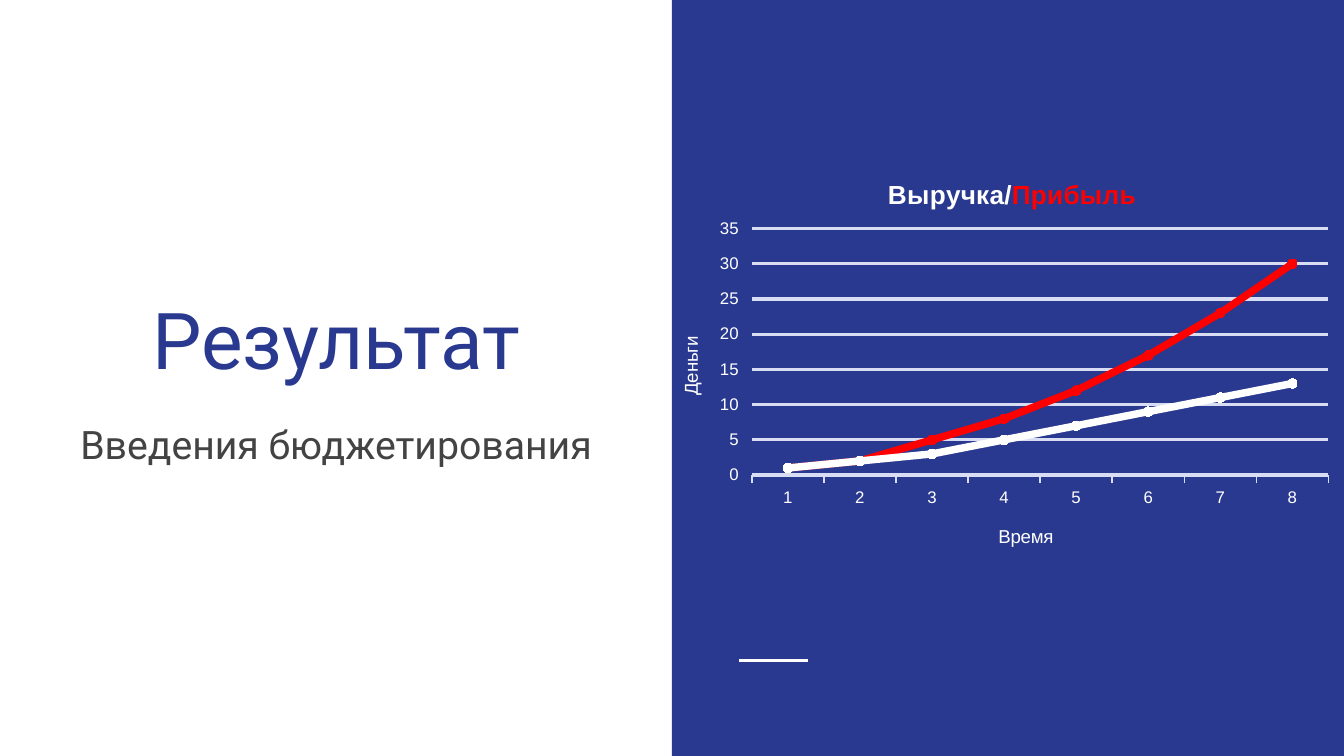
"""Build the budgeting result slide with a revenue and profit line chart."""
import pptx
import pptx.chart.data
import pptx.dml.color
import pptx.enum.chart
import pptx.enum.shapes
import pptx.enum.text
import pptx.oxml
import pptx.oxml.ns
import pptx.util

Cm = pptx.util.Cm
Pt = pptx.util.Pt
qn = pptx.oxml.ns.qn

NAVY = pptx.dml.color.RGBColor(0x2A, 0x39, 0x90)
WHITE = pptx.dml.color.RGBColor(0xFF, 0xFF, 0xFF)
GRAY = pptx.dml.color.RGBColor(0x43, 0x43, 0x43)
RED = pptx.dml.color.RGBColor(0xFF, 0x00, 0x00)
PALE = pptx.dml.color.RGBColor(0xD9, 0xDD, 0xF4)


def add_text(paragraph, text, size=10, color=WHITE, font="Arial", bold=False):
    run = paragraph.add_run()
    run.text = text
    run.font.size = Pt(size)
    run.font.name = font
    run.font.bold = bold
    run.font.color.rgb = color


def set_layout(element, index, **values):
    for old_layout in element.findall(qn("c:layout")):
        element.remove(old_layout)
    fields = "".join(f'<c:{name} val="{value}"/>' for name, value in values.items())
    element.insert(index, pptx.oxml.parse_xml(
        f'<c:layout {pptx.oxml.ns.nsdecls("c")}><c:manualLayout>{fields}</c:manualLayout></c:layout>'))


presentation = pptx.Presentation()
presentation.slide_width = Cm(25.4)
presentation.slide_height = Cm(14.29)
slide = presentation.slides.add_slide(presentation.slide_layouts[6])

panel = slide.shapes.add_shape(
    pptx.enum.shapes.MSO_SHAPE.RECTANGLE, Cm(12.7), Cm(0), Cm(12.7), Cm(14.29))
panel.shadow.inherit = False
panel.fill.solid()
panel.fill.fore_color.rgb = NAVY
panel.line.fill.background()

accent = slide.shapes.add_connector(
    pptx.enum.shapes.MSO_CONNECTOR.STRAIGHT, Cm(13.97), Cm(12.48), Cm(15.27), Cm(12.48))
accent.line.color.rgb = WHITE
accent.line.width = Pt(1.5)
accent._element.spPr.append(
    pptx.oxml.parse_xml(f'<a:effectLst {pptx.oxml.ns.nsdecls("a")}/>'))

for text, top, height, anchor, size, color in (
    ("Результат", 3.2, 4.34, pptx.enum.text.MSO_ANCHOR.BOTTOM, 42, NAVY),
    ("Введения бюджетирования", 7.7, 3.53, pptx.enum.text.MSO_ANCHOR.TOP, 21, GRAY),
):
    frame = slide.shapes.add_textbox(Cm(0.74), Cm(top), Cm(11.23), Cm(height)).text_frame
    frame.word_wrap = True
    frame.vertical_anchor = anchor
    frame.margin_left = frame.margin_right = Cm(0.25)
    frame.margin_top = frame.margin_bottom = Cm(0.25)
    frame.paragraphs[0].alignment = pptx.enum.text.PP_ALIGN.CENTER
    add_text(frame.paragraphs[0], text, size=size, color=color, font="Roboto")

chart_data = pptx.chart.data.CategoryChartData()
chart_data.categories = [str(period) for period in range(1, 9)]
chart_data.add_series("Series 1", (1, 2, 5, 8, 12, 17, 23, 30))
chart_data.add_series("Series 2", (1, 2, 3, 5, 7, 9, 11, 13))
chart = slide.shapes.add_chart(
    pptx.enum.chart.XL_CHART_TYPE.LINE_MARKERS,
    Cm(12.24), Cm(2.9), Cm(13.13), Cm(7.9), chart_data).chart
chart.has_legend = False
chart.font.size = Pt(10)
chart.font.name = "Arial"
chart.font.color.rgb = WHITE
chart.plots[0].vary_by_categories = False

for series, color in zip(chart.plots[0].series, (RED, WHITE)):
    series.smooth = False
    series.format.line.color.rgb = color
    series.format.line.width = Pt(4)
    series.marker.style = pptx.enum.chart.XL_MARKER_STYLE.CIRCLE
    series.marker.size = 5
    series.marker.format.fill.solid()
    series.marker.format.fill.fore_color.rgb = color
    series.marker.format.line.color.rgb = color

chart.has_title = True
heading = chart.chart_title.text_frame.paragraphs[0]
add_text(heading, "Выручка/", size=14, bold=True)
add_text(heading, "Прибыль", size=14, color=RED, bold=True)
set_layout(chart.chart_title._element, 1, xMode="edge", yMode="edge", x=0.34, y=0.05)

for axis, text, rotation, left, top in (
    (chart.category_axis, "Время", 0, 0.5, 0.88),
    (chart.value_axis, "Деньги", -5400000, 0.04, 0.43),
):
    axis.tick_labels.font.size = Pt(9)
    axis.tick_labels.font.name = "Arial"
    axis.tick_labels.font.color.rgb = WHITE
    axis.major_tick_mark = pptx.enum.chart.XL_TICK_MARK.OUTSIDE
    axis.has_title = True
    frame = axis.axis_title.text_frame
    add_text(frame.paragraphs[0], text)
    frame._txBody.bodyPr.set("rot", str(rotation))
    frame._txBody.bodyPr.set("vert", "horz")
    set_layout(axis.axis_title._element, 1, xMode="edge", yMode="edge", x=left, y=top)

chart.category_axis.format.line.color.rgb = PALE
chart.category_axis.format.line.width = Pt(0.75)
chart.value_axis.format.line.fill.background()
chart.value_axis.minimum_scale = 0
chart.value_axis.maximum_scale = 35
chart.value_axis.major_unit = 5
chart.value_axis.major_gridlines.format.line.color.rgb = PALE
chart.value_axis.major_gridlines.format.line.width = Pt(1.75)
set_layout(chart._chartSpace.chart.plotArea, 0, layoutTarget="inner",
           xMode="edge", yMode="edge", x=0.15, y=0.18, w=0.83, h=0.59)

presentation.save("out.pptx")
